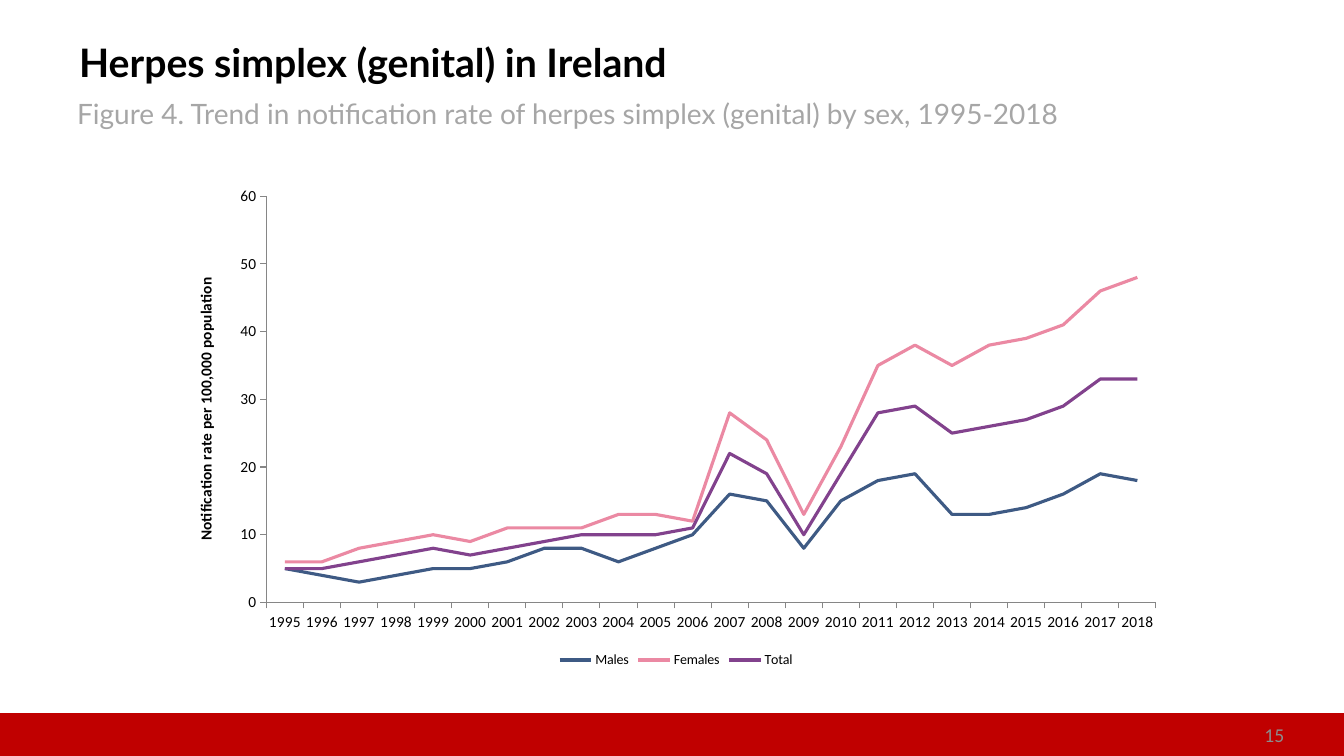
from pptx import Presentation
from pptx.chart.data import CategoryChartData
from pptx.dml.color import RGBColor
from pptx.enum.chart import XL_CHART_TYPE, XL_LEGEND_POSITION, XL_TICK_MARK
from pptx.enum.shapes import MSO_SHAPE
from pptx.enum.text import MSO_ANCHOR, MSO_AUTO_SIZE, PP_ALIGN
from pptx.oxml import parse_xml
from pptx.oxml.ns import nsdecls, qn
from pptx.util import Pt

LEFT, RIGHT = PP_ALIGN.LEFT, PP_ALIGN.RIGHT
TOP, MIDDLE = MSO_ANCHOR.TOP, MSO_ANCHOR.MIDDLE
NO_AUTOFIT = MSO_AUTO_SIZE.NONE
LINE_CHART = XL_CHART_TYPE.LINE
LEGEND_BOTTOM = XL_LEGEND_POSITION.BOTTOM
TICK_OUTSIDE, TICK_NONE = XL_TICK_MARK.OUTSIDE, XL_TICK_MARK.NONE
RECTANGLE = MSO_SHAPE.RECTANGLE

THEME = {
    "band": RGBColor.from_string("C00000"),
    "axis": RGBColor.from_string("868686"),
    "title": {"name": "Lato", "size": Pt(28), "bold": True, "color": RGBColor.from_string("000000")},
    "subtitle": {"name": "Lato", "size": Pt(20), "bold": False, "color": RGBColor.from_string("A6A6A6")},
    "number": {"name": "Calibri", "size": Pt(14), "bold": False, "color": RGBColor.from_string("8C8C8C")},
    "legend": {"name": "Calibri", "size": Pt(10), "bold": False, "color": RGBColor.from_string("000000")},
    "labels": {"name": "Calibri", "size": Pt(11), "bold": False, "color": RGBColor.from_string("000000")},
    "axis_title": {"name": "Calibri", "size": Pt(11), "bold": True, "color": RGBColor.from_string("000000")},
}
YEARS = [str(year) for year in range(1995, 2019)]
RATES = {
    "Males": ("3E5A84", [5, 4, 3, 4, 5, 5, 6, 8, 8, 6, 8, 10, 16, 15, 8, 15, 18, 19, 13, 13, 14, 16, 19, 18]),
    "Females": ("EB89A3", [6, 6, 8, 9, 10, 9, 11, 11, 11, 13, 13, 12, 28, 24, 13, 23, 35, 38, 35, 38, 39, 41, 46, 48]),
    "Total": ("82428D", [5, 5, 6, 7, 8, 7, 8, 9, 10, 10, 10, 11, 22, 19, 10, 19, 28, 29, 25, 26, 27, 29, 33, 33]),
}


def format_font(font, style):
    for attribute, value in THEME[style].items():
        if attribute == "color":
            font.color.rgb = value
        else:
            setattr(font, attribute, value)


def fill_text(shape, text, style, anchor, alignment, margins):
    frame = shape.text_frame
    horizontal, vertical = margins
    settings = {
        "word_wrap": True, "auto_size": NO_AUTOFIT, "vertical_anchor": anchor,
        "margin_left": Pt(horizontal), "margin_right": Pt(horizontal),
        "margin_top": Pt(vertical), "margin_bottom": Pt(vertical),
    }
    for attribute, value in settings.items():
        setattr(frame, attribute, value)
    paragraph = frame.paragraphs[0]
    paragraph.alignment = alignment
    run = paragraph.add_run()
    run.text = text
    format_font(run.font, style)


presentation = Presentation()
presentation.slide_width, presentation.slide_height = Pt(960), Pt(540)
slide = presentation.slides.add_slide(presentation.slide_layouts[5])
shapes = slide.shapes

band = shapes.add_shape(RECTANGLE, Pt(0), Pt(510), Pt(960), Pt(30))
band.shadow.inherit = False
band.fill.solid()
band.fill.fore_color.rgb = THEME["band"]
band.line.color.rgb = THEME["band"]
band.line.width = Pt(2)

title = shapes.title
title_box = {"left": Pt(48), "top": Pt(21.6), "width": Pt(744), "height": Pt(45)}
for attribute, value in title_box.items():
    setattr(title, attribute, value)
fill_text(title, "Herpes simplex (genital) in Ireland", "title", MIDDLE, LEFT, (8.6, 4.3))

subtitle = shapes.add_textbox(Pt(48), Pt(65.5), Pt(882), Pt(31.5))
fill_text(subtitle, "Figure 4. Trend in notification rate of herpes simplex (genital) by sex, 1995-2018",
          "subtitle", TOP, LEFT, (7.2, 3.6))

slide_number = shapes.add_textbox(Pt(702), Pt(510), Pt(224), Pt(29))
fill_text(slide_number, "15", "number", MIDDLE, RIGHT, (8.6, 4.3))

chart_data = CategoryChartData(number_format="0")
chart_data.categories = YEARS
for name, (color, rates) in RATES.items():
    chart_data.add_series(name, rates)
chart = shapes.add_chart(LINE_CHART, Pt(126), Pt(126), Pt(714), Pt(354), chart_data).chart
format_font(chart.font, "legend")
chart.has_title = False
chart.has_legend = True
chart.legend.position = LEGEND_BOTTOM
chart.legend.include_in_layout = False
format_font(chart.legend.font, "legend")

plot = chart.plots[0]
plot.vary_by_categories = False
for series, (color, rates) in zip(plot.series, RATES.values()):
    series.smooth = False
    series.format.line.color.rgb = RGBColor.from_string(color)
    series.format.line.width = Pt(2.25)

for axis in (chart.category_axis, chart.value_axis):
    axis.has_major_gridlines = False
    axis.major_tick_mark = TICK_OUTSIDE
    axis.minor_tick_mark = TICK_NONE
    axis.format.line.color.rgb = THEME["axis"]
    axis.format.line.width = Pt(0.75)
    format_font(axis.tick_labels.font, "labels")

value_axis = chart.value_axis
scale = {"minimum_scale": 0, "maximum_scale": 60, "major_unit": 10}
for attribute, value in scale.items():
    setattr(value_axis, attribute, value)
value_axis.tick_labels.number_format = "0"
value_axis.tick_labels.number_format_is_linked = False
axis_title_run = value_axis.axis_title.text_frame.paragraphs[0].add_run()
axis_title_run.text = "Notification rate per 100,000 population"
format_font(axis_title_run.font, "axis_title")

plot_area = chart.element.chart.plotArea
for layout in plot_area.findall(qn("c:layout")):
    plot_area.remove(layout)
plot_area.insert(0, parse_xml(
    f'<c:layout {nsdecls("c")}><c:manualLayout><c:layoutTarget val="inner"/>'
    '<c:xMode val="edge"/><c:yMode val="edge"/><c:x val="0.09"/><c:y val="0.04"/>'
    '<c:w val="0.89"/><c:h val="0.82"/></c:manualLayout></c:layout>'))

presentation.save("out.pptx")
